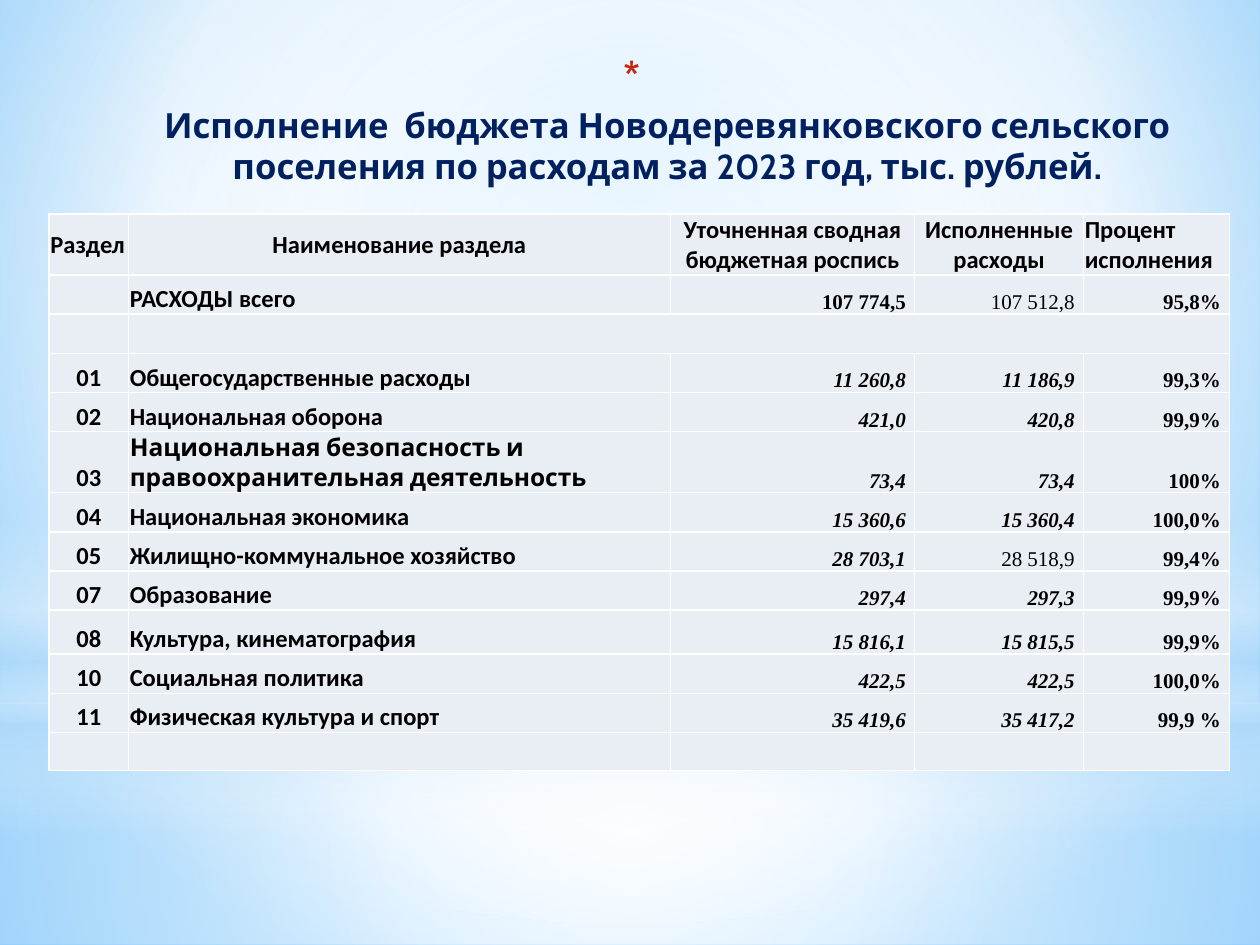
from lxml import etree
from pptx import Presentation
from pptx import util as u
from pptx.dml.color import RGBColor
from pptx.enum import shapes, text
from pptx.oxml import parse_xml
from pptx.oxml.ns import nsdecls, qn

THEME = {
    "title": "002060", "bullet": "C3260C", "ink": "000000",
    "cell": "E9EDF4", "border": "FFFFFF", "white": "FFFFFF", "sky": "B4DCFA",
    "edge": "9ED5FF", "deep": "5BB9FF",
    "title_pt": 19.8, "label_pt": 14, "number_pt": 12,
    "title_font": "Cabin", "label_font": "Calibri", "number_font": "Times New Roman",
}


def gradient(stops, focus=None):
    gs = "".join(
        f'<a:gs pos="{pos * 1000}"><a:srgbClr val="{THEME[name]}">'
        f'<a:alpha val="{alpha * 1000}"/></a:srgbClr></a:gs>'
        for pos, name, alpha in stops)
    if focus:
        l, t, r, b = (v * 1000 for v in focus)
        kind = (f'<a:path path="circle"><a:fillToRect l="{l}" t="{t}" '
                f'r="{r}" b="{b}"/></a:path>')
    else:
        kind = '<a:lin ang="5400000" scaled="0"/>'
    return parse_xml(f'<a:gradFill rotWithShape="1" {nsdecls("a")}>'
                     f'<a:gsLst>{gs}</a:gsLst>{kind}</a:gradFill>')


def paint(fill, parent, grad):
    fill.solid()
    solid = parent.find(".//" + qn("a:solidFill"))
    solid.getparent().replace(solid, grad)


prs = Presentation()
prs.slide_width, prs.slide_height = u.Inches(10), u.Inches(7.5)
W, H = prs.slide_width, prs.slide_height
s = prs.slides.add_slide(prs.slide_layouts[5])

paint(s.background.fill, s.element.find(".//" + qn("p:bg")),
      gradient([(0, "edge", 100), (60, "white", 100), (100, "deep", 100)],
               (20, 10, 20, 60)))

CENTER = (50, 50, 50, 50)
RECT, OVAL = shapes.MSO_SHAPE.RECTANGLE, shapes.MSO_SHAPE.OVAL
layers = [
    (RECT, 0.744, 0.256, [(0, "white", 91), (37, "white", 76), (100, "sky", 79)], CENTER),
    (RECT, 0, 0.744, [(0, "white", 89), (48, "white", 62), (100, "sky", 79)], CENTER),
    (RECT, 0.55, 0.333, [(0, "white", 0), (29, "white", 30), (45, "sky", 40),
                         (55, "white", 26), (65, "sky", 60), (100, "white", 0)], None),
    (OVAL, 0.233, 0.744, [(0, "white", 100), (56, "white", 0)], CENTER),
]
for kind, top, height, stops, focus in layers:
    sp = s.shapes.add_shape(kind, 0, int(H * top), W, int(H * height))
    sp.shadow.inherit = False
    sp.line.fill.background()
    paint(sp.fill, sp.element.spPr, gradient(stops, focus))

sp = s.shapes.title
s.shapes.element.append(sp.element)
sp.left, sp.top, sp.width, sp.height = (
    int(W * 0.051), int(H * 0.059), int(W * 0.922), int(H * 0.123))
tf = sp.text_frame
tf.word_wrap = True
tf.auto_size = text.MSO_AUTO_SIZE.NONE
tf.vertical_anchor = text.MSO_ANCHOR.TOP
p = tf.paragraphs[0]
p.text = ("\vИсполнение  бюджета Новодеревянковского сельского поселения "
          "по расходам за 2023 год, тыс. рублей.")
p.alignment = text.PP_ALIGN.CENTER
p.line_spacing = 1.0
r = p.runs[0]
r.font.size, r.font.bold = u.Pt(THEME["title_pt"]), True
r.font.name = THEME["title_font"]
r.font.color.rgb = RGBColor.from_string(THEME["title"])
br = p._p.find(qn("a:br"))
etree.SubElement(br, qn("a:rPr"), sz=str(round(THEME["title_pt"] * 100)), b="1")
pPr = p._p.get_or_add_pPr()
pPr.set("marL", str(u.Inches(0.35)))
pPr.set("indent", str(-u.Inches(0.35)))
for xml in (f'<a:buClr {nsdecls("a")}><a:srgbClr val="{THEME["bullet"]}"/></a:buClr>',
            f'<a:buSzPct {nsdecls("a")} val="128000"/>',
            f'<a:buChar {nsdecls("a")} char="*"/>'):
    pPr.append(parse_xml(xml))

rows = [
    ("Раздел", "Наименование раздела", "Уточненная сводная бюджетная роспись",
     "Исполненные расходы", "Процент исполнения"),
    ("", "РАСХОДЫ всего", "107 774,5", "107 512,8", "95,8%"),
    ("",) * 5,
    ("01", "Общегосударственные расходы", "11 260,8", "11 186,9", "99,3%"),
    ("02", "Национальная оборона", "421,0", "420,8", "99,9%"),
    ("03", "Национальная безопасность и правоохранительная деятельность",
     "73,4", "73,4", "100%"),
    ("04", "Национальная экономика", "15 360,6", "15 360,4", "100,0%"),
    ("05", "Жилищно-коммунальное хозяйство", "28 703,1", "28 518,9", "99,4%"),
    ("07", "Образование", "297,4", "297,3", "99,9%"),
    ("08", "Культура, кинематография", "15 816,1", "15 815,5", "99,9%"),
    ("10", "Социальная политика", "422,5", "422,5", "100,0%"),
    ("11", "Физическая культура и спорт", "35 419,6", "35 417,2", "99,9 %"),
    ("",) * 5,
]
col_shares = [0.063, 0.43, 0.194, 0.134, 0.116]
row_shares = [0.0415] * len(rows)
row_shares[0], row_shares[5], row_shares[9], row_shares[-1] = 0.064, 0.0635, 0.0465, 0.04
PLAIN = {(1, 3), (7, 3)}
L, C, R = text.PP_ALIGN.LEFT, text.PP_ALIGN.CENTER, text.PP_ALIGN.RIGHT
head_align, body_align = [L, C, C, C, L], [C, L, R, R, R]

tbl = s.shapes.add_table(len(rows), len(col_shares), int(W * 0.039), int(H * 0.2265),
                         int(W * sum(col_shares)), int(H * sum(row_shares))).table
tbl.first_row = tbl.horz_banding = False
for col, share in zip(tbl.columns, col_shares):
    col.width = int(W * share)
for row, share in zip(tbl.rows, row_shares):
    row.height = int(H * share)

for i, values in enumerate(rows):
    for j, value in enumerate(values):
        cell = tbl.cell(i, j)
        number = i > 0 and j > 1
        cell.margin_left = cell.margin_right = u.Inches(0.07 if number else 0.01)
        cell.margin_top = u.Inches(0 if number else 0.01)
        cell.margin_bottom = 0
        cell.vertical_anchor = (text.MSO_ANCHOR.MIDDLE if i == 0 and j < 4
                                else text.MSO_ANCHOR.BOTTOM)
        tcPr = cell._tc.get_or_add_tcPr()
        for k, side in enumerate(("lnL", "lnR", "lnT", "lnB")):
            tcPr.insert(k, parse_xml(
                f'<a:{side} {nsdecls("a")} w="12700"><a:solidFill>'
                f'<a:srgbClr val="{THEME["border"]}"/></a:solidFill></a:{side}>'))
        cell.fill.solid()
        cell.fill.fore_color.rgb = RGBColor.from_string(THEME["cell"])
        p = cell.text_frame.paragraphs[0]
        if not value:
            etree.SubElement(p._p, qn("a:endParaRPr"), sz=str(THEME["number_pt"] * 100))
            continue
        p.text = value
        p.alignment = (body_align if i else head_align)[j]
        f = p.runs[0].font
        f.size = u.Pt(THEME["number_pt" if number else "label_pt"])
        f.name = THEME["number_font" if number else
                       "title_font" if (i, j) == (5, 1) else "label_font"]
        f.bold = (i, j) not in PLAIN
        f.italic = i > 1 and j in (2, 3) and (i, j) not in PLAIN
        f.color.rgb = RGBColor.from_string(THEME["ink"])
tbl.cell(2, 1).merge(tbl.cell(2, 4))

prs.save("out.pptx")
